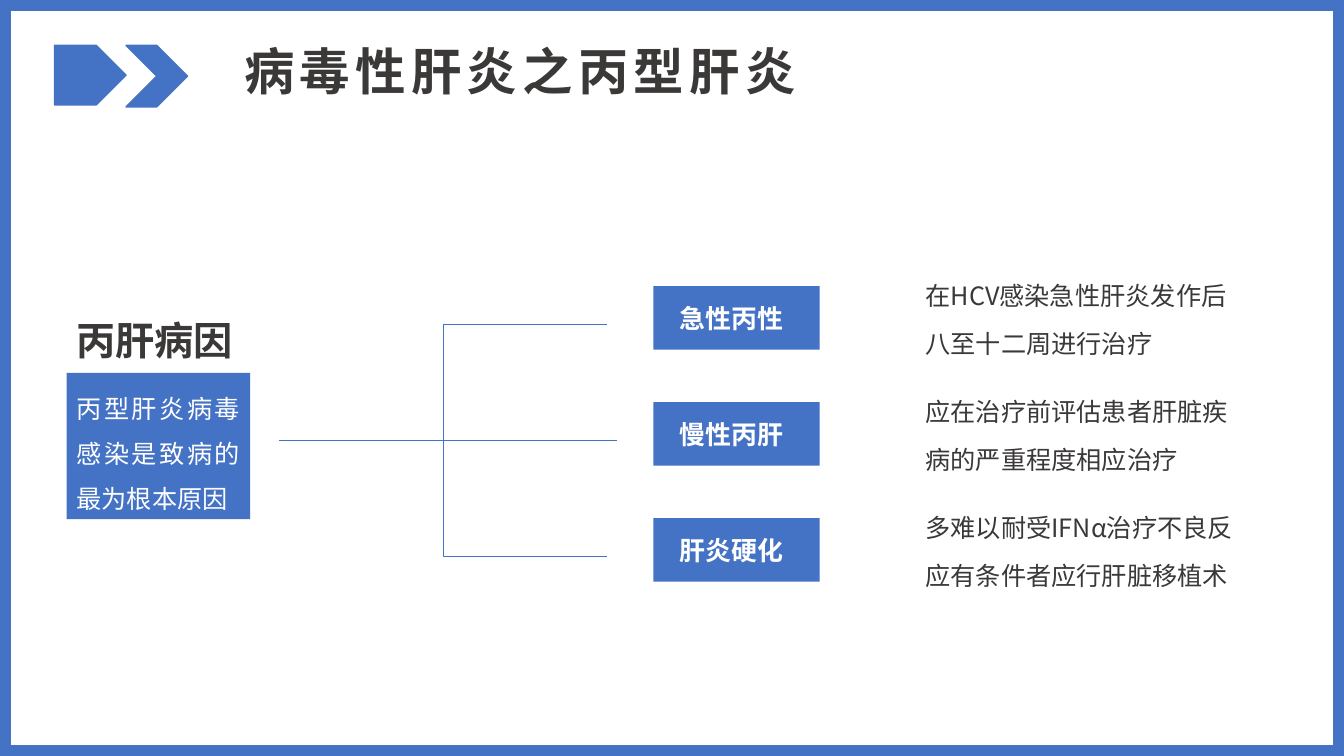
"""Build the hepatitis C slide: one cause branching to three stages."""
from lxml.etree import SubElement
from pptx import Presentation
from pptx.dml.color import RGBColor
from pptx.enum.shapes import MSO_CONNECTOR, MSO_SHAPE
from pptx.enum.text import MSO_ANCHOR, MSO_AUTO_SIZE, PP_ALIGN
from pptx.oxml.ns import qn
from pptx.util import Inches, Pt

TITLE = "病毒性肝炎之丙型肝炎"
HEAD = "丙肝病因"
CAUSE = "丙型肝炎病毒感染是致病的最为根本原因"
STAGES = [
    ("急性丙性", "在HCV感染急性肝炎发作后八至十二周进行治疗"),
    ("慢性丙肝", "应在治疗前评估患者肝脏疾病的严重程度相应治疗"),
    ("肝炎硬化", "多难以耐受IFNα治疗不良反应有条件者应行肝脏移植术"),
]

FONT = "Noto Sans CJK SC"
BLUE = RGBColor(0x44, 0x72, 0xC4)
WHITE = RGBColor(0xFF, 0xFF, 0xFF)
DARK = RGBColor(0x3B, 0x38, 0x38)

WIDE, HIGH, EDGE = 13.33, 7.5, 0.11
TOP, STEP = 2.84, 1.15
START, MID = 2.77, 4.37


def write(shape, text, size, color=DARK, bold=False, align=PP_ALIGN.LEFT,
          space=None, track=None, pad=(0.1, 0.05), anchor=MSO_ANCHOR.TOP,
          grow=False):
    """Put one formatted paragraph into a shape."""
    frame = shape.text_frame
    frame.word_wrap = True
    frame.auto_size = (MSO_AUTO_SIZE.SHAPE_TO_FIT_TEXT if grow
                       else MSO_AUTO_SIZE.NONE)
    frame.vertical_anchor = anchor
    frame.margin_left = frame.margin_right = Inches(pad[0])
    frame.margin_top = frame.margin_bottom = Inches(pad[1])
    para = frame.paragraphs[0]
    para.alignment = align
    if space:
        para.line_spacing = space
    run = para.add_run()
    run.text = text
    font = run.font
    font.name, font.size, font.bold = FONT, Pt(size), bold
    font.color.rgb = color
    props = run._r.get_or_add_rPr()
    SubElement(props, qn("a:ea")).set("typeface", FONT)
    if track:
        props.set("spc", str(round(track * 100)))


def block(slide, kind, box, fill=BLUE, line=None):
    """Add a filled shape without a shadow."""
    shape = slide.shapes.add_shape(kind, *map(Inches, box))
    shape.shadow.inherit = False
    shape.fill.solid()
    shape.fill.fore_color.rgb = fill
    if line:
        shape.line.color.rgb = fill
        shape.line.width = Pt(line)
    else:
        shape.line.fill.background()
    return shape


def label(slide, box, text, size, **style):
    """Add a text box."""
    write(slide.shapes.add_textbox(*map(Inches, box)), text, size, **style)


def link(slide, kind, right, end):
    """Draw a thin line from the cause to a stage."""
    ends = map(Inches, (START, MID, right, end))
    line = slide.shapes.add_connector(kind, *ends)
    line.line.color.rgb = BLUE
    line.line.width = Pt(0.5)
    SubElement(line._element.spPr, qn("a:effectLst"))


def main():
    """Compose and save the slide."""
    deck = Presentation()
    deck.slide_width, deck.slide_height = Inches(WIDE), Inches(HIGH)
    slide = deck.slides.add_slide(deck.slide_layouts[5])

    rect = MSO_SHAPE.RECTANGLE
    block(slide, rect, (0, 0, WIDE, HIGH))
    block(slide, rect, (EDGE, EDGE, WIDE - 2 * EDGE, HIGH - 2 * EDGE), WHITE)
    block(slide, MSO_SHAPE.CHEVRON, (1.25, 0.45, 0.61, 0.61), line=1)
    block(slide, MSO_SHAPE.PENTAGON, (0.54, 0.45, 0.71, 0.59), line=1)

    title = slide.shapes.title
    slide.shapes._spTree.append(title._element)
    title.left, title.top = Inches(2.32), Inches(0.35)
    title.width, title.height = Inches(6.25), Inches(0.7)
    write(title, TITLE, 36, bold=True, track=3.8, space=1.0, grow=True)

    for row, (name, note) in enumerate(STAGES):
        top = TOP + row * STEP
        stage = block(slide, rect, (6.48, top, 1.65, 0.63))
        write(stage, name, 18.5, color=WHITE, bold=True, pad=(0.26, 0.14),
              anchor=MSO_ANCHOR.MIDDLE)
        label(slide, (8.92, top - 0.37, 3.74, 0.75), note, 18,
              space=1.6, pad=(0.26, 0.13))

    cause = block(slide, rect, (0.66, 3.7, 1.82, 1.45))
    write(cause, CAUSE, 18, color=WHITE, align=PP_ALIGN.JUSTIFY, space=1.5,
          grow=True)
    label(slide, (0.66, 3.09, 1.88, 0.57), HEAD, 28, bold=True, grow=True)

    link(slide, MSO_CONNECTOR.STRAIGHT, 6.12, MID)
    for end in (MID + STEP, MID - STEP):
        link(slide, MSO_CONNECTOR.ELBOW, 6.02, end)

    deck.save("out.pptx")


if __name__ == "__main__":
    main()
